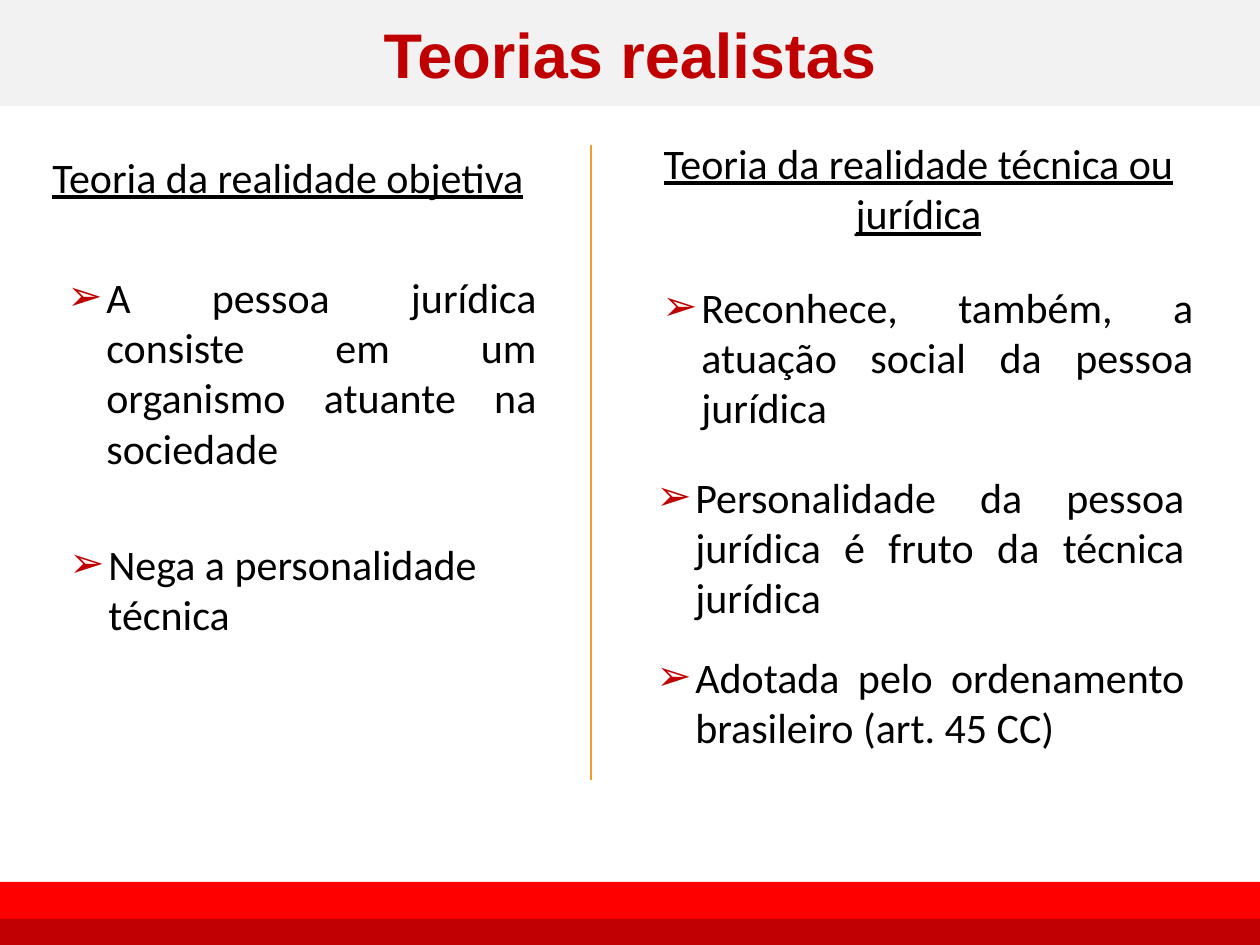
"""Build a slide that sets two realist theories side by side."""
from dataclasses import dataclass

from lxml import etree
from pptx import Presentation
from pptx.dml.color import RGBColor
from pptx.enum.shapes import MSO_CONNECTOR, MSO_SHAPE
from pptx.enum.text import MSO_ANCHOR, MSO_AUTO_SIZE, PP_ALIGN
from pptx.oxml.ns import qn
from pptx.util import Emu, Pt

RECT = MSO_SHAPE.RECTANGLE
STRAIGHT = MSO_CONNECTOR.STRAIGHT
MIDDLE = MSO_ANCHOR.MIDDLE
GROW = MSO_AUTO_SIZE.SHAPE_TO_FIT_TEXT
LEFT, CENTER, JUSTIFY = PP_ALIGN.LEFT, PP_ALIGN.CENTER, PP_ALIGN.JUSTIFY
WIDTH, HEIGHT = 1260, 945
INDENT = 39


@dataclass(frozen=True)
class Theme:
    """Hold the colours, fonts and type sizes."""
    gray: str = "F2F2F2"
    red: str = "FF0000"
    dark: str = "C00000"
    gold: str = "EF9F28"
    ink: str = "000000"
    head: str = "Arial"
    body: str = "Calibri"
    large: int = 36
    small: int = 24
    rule: float = 0.75


THEME = Theme()

HEADS = [
    ("Teoria da realidade objetiva", (40, 145, 566, 63), LEFT),
    ("Teoria da realidade técnica ou jurídica", (591, 131, 655, 115), CENTER),
]
POINTS = [
    ("A pessoa jurídica consiste em um organismo atuante na sociedade",
     (55, 265, 494, 255), JUSTIFY),
    ("Nega a personalidade técnica", (57, 532, 534, 152), LEFT),
    ("Reconhece, também, a atuação social da pessoa jurídica",
     (650, 275, 556, 165), JUSTIFY),
    ("Personalidade da pessoa jurídica é fruto da técnica jurídica",
     (644, 465, 553, 165), JUSTIFY),
    ("Adotada pelo ordenamento brasileiro (art. 45 CC)",
     (644, 645, 553, 115), JUSTIFY),
]


def px(count):
    """Turn pixels into EMU."""
    return Emu(round(count * 914400 / 126))


def color(code):
    """Turn a hex code into a colour."""
    return RGBColor.from_string(code)


def write(frame, text, align, name, size, tint):
    """Set one styled paragraph and return it."""
    frame.word_wrap = True
    frame.text = text
    para = frame.paragraphs[0]
    para.alignment = align
    font = para.runs[0].font
    font.name, font.size = name, Pt(size)
    font.color.rgb = color(tint)
    return para


def add_band(slide, box, tint):
    """Add a plain filled band and return it."""
    band = slide.shapes.add_shape(RECT, *map(px, box))
    band.shadow.inherit = False
    band.fill.solid()
    band.fill.fore_color.rgb = color(tint)
    band.line.fill.background()
    return band


def add_title(slide, text):
    """Add the title on its gray band."""
    frame = add_band(slide, (0, 0, WIDTH, 106), THEME.gray).text_frame
    frame.vertical_anchor = MIDDLE
    para = write(frame, text, CENTER, THEME.head, THEME.large, THEME.dark)
    para.runs[0].font.bold = True


def add_text(slide, text, box, align):
    """Add a body text box and return its paragraph."""
    frame = slide.shapes.add_textbox(*map(px, box)).text_frame
    para = write(frame, text, align, THEME.body, THEME.small, THEME.ink)
    frame.auto_size = GROW
    return para


def add_head(slide, text, box, align):
    """Add an underlined column heading."""
    add_text(slide, text, box, align).runs[0].font.underline = True


def add_point(slide, text, box, align):
    """Add a point with a red arrow bullet."""
    props = add_text(slide, text, box, align)._p.get_or_add_pPr()
    props.set("marL", str(px(INDENT)))
    props.set("indent", str(-px(INDENT)))
    tint = etree.SubElement(props, qn("a:buClr"))
    etree.SubElement(tint, qn("a:srgbClr"), val=THEME.dark)
    etree.SubElement(props, qn("a:buFont"), typeface=THEME.head)
    etree.SubElement(props, qn("a:buChar"), char="➢")


def add_rule(slide, left, top, end):
    """Add the upright rule between the columns."""
    rule = slide.shapes.add_connector(
        STRAIGHT, px(left), px(top), px(left), px(end))
    rule.line.color.rgb = color(THEME.gold)
    rule.line.width = Pt(THEME.rule)
    etree.SubElement(rule._element.spPr, qn("a:effectLst"))


def main():
    """Build and save the slide."""
    deck = Presentation()
    deck.slide_width, deck.slide_height = px(WIDTH), px(HEIGHT)
    slide = deck.slides.add_slide(deck.slide_layouts[6])
    add_title(slide, "Teorias realistas")
    add_band(slide, (-1, 882, WIDTH + 1, 48), THEME.red)
    add_band(slide, (-1, 919, WIDTH + 1, 39), THEME.dark)
    for head in HEADS:
        add_head(slide, *head)
    add_rule(slide, 591, 145, 780)
    for point in POINTS:
        add_point(slide, *point)
    deck.save("out.pptx")


if __name__ == "__main__":
    main()
